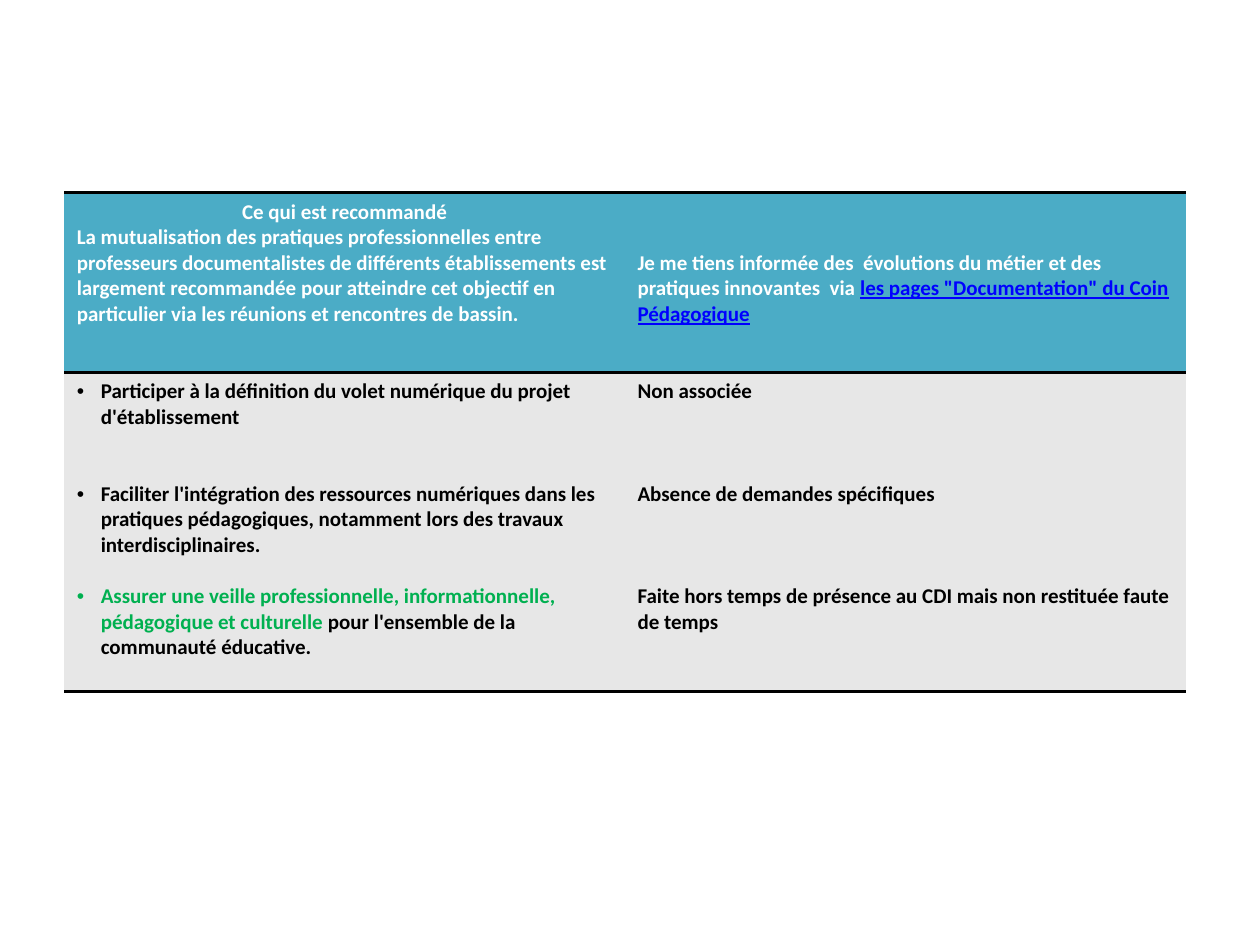
from dataclasses import dataclass

from lxml.etree import SubElement
from pptx import Presentation
from pptx.dml.color import RGBColor as Rgb
from pptx.enum.text import MSO_ANCHOR as Anchor, PP_ALIGN as Align
from pptx.oxml.ns import qn
from pptx.util import Emu, Inches, Pt


@dataclass(frozen=True)
class Theme:
    font: str = "Calibri"
    size: float = 12
    line: float = 14.65  # height of one text line, in points
    rule: float = 2
    indent: float = 0.19
    margin_x: float = 0.1
    margin_y: float = 0.05
    white: str = "FFFFFF"
    black: str = "000000"
    link: str = "0000FF"
    green: str = "00B050"
    header: str = "4BACC6"
    body: str = "E7E7E7"


@dataclass(frozen=True)
class Item:
    """One paragraph: (text, colour) spans and the lines left free above it."""
    spans: tuple
    gap: int = 0
    bullet: bool = False
    align: Align = Align.LEFT


THEME = Theme()
PAGE_WIDTH, PAGE_HEIGHT = Inches(10), Inches(7.5)

HEADER = (
    (
        Item((("Ce qui est recommandé", THEME.white),), align=Align.CENTER),
        Item((("La mutualisation des pratiques professionnelles entre professeurs "
               "documentalistes de différents établissements est largement "
               "recommandée pour atteindre cet objectif en particulier via les "
               "réunions et rencontres de bassin.", THEME.white),)),
    ),
    (
        Item((("Je me tiens informée des  évolutions du métier et des pratiques "
               "innovantes  via ", THEME.white),
              ('les pages "Documentation" du Coin Pédagogique', THEME.link)), gap=2),
    ),
)
BODY = (
    (
        Item((("Participer à la définition du volet numérique du projet "
               "d'établissement", THEME.black),), bullet=True),
        Item((("Faciliter l'intégration des ressources numériques dans les "
               "pratiques pédagogiques, notamment lors des travaux "
               "interdisciplinaires.", THEME.black),), gap=2, bullet=True),
        Item((("Assurer une veille professionnelle, informationnelle, "
               "pédagogique et culturelle ", THEME.green),
              ("pour l'ensemble de la communauté éducative.", THEME.black)),
             gap=1, bullet=True),
    ),
    (
        Item((("Non associée", THEME.black),)),
        Item((("Absence de demandes spécifiques", THEME.black),), gap=3),
        Item((("Faite hors temps de présence au CDI mais non restituée faute "
               "de temps", THEME.black),), gap=3),
    ),
)


def add_bullet(para):
    properties = para._p.get_or_add_pPr()
    properties.set("marL", str(Inches(THEME.indent)))
    properties.set("indent", str(-Inches(THEME.indent)))
    SubElement(properties, qn("a:buFont"), typeface="Arial")
    SubElement(properties, qn("a:buChar"), char="•")


def add_borders(cell):
    """Rules above and below the cell, none at its sides."""
    properties = cell._tc.get_or_add_tcPr()
    for side in ("lnL", "lnR"):
        SubElement(SubElement(properties, qn(f"a:{side}"), w="0"), qn("a:noFill"))
    for side in ("lnT", "lnB"):
        line = SubElement(properties, qn(f"a:{side}"), w=str(Pt(THEME.rule)))
        fill = SubElement(line, qn("a:solidFill"))
        SubElement(fill, qn("a:srgbClr"), val=THEME.black)


def fill_cell(cell, items, colour):
    # Borders come before the fill in the cell properties
    add_borders(cell)
    cell.fill.solid()
    cell.fill.fore_color.rgb = Rgb.from_string(colour)

    # Free lines above the first paragraph belong to the cell margin
    cell.vertical_anchor = Anchor.TOP
    cell.margin_left = cell.margin_right = Inches(THEME.margin_x)
    cell.margin_bottom = Inches(THEME.margin_y)
    cell.margin_top = Inches(THEME.margin_y) + Pt(items[0].gap * THEME.line)

    frame = cell.text_frame
    for index, item in enumerate(items):
        para = frame.add_paragraph() if index else frame.paragraphs[0]
        para.alignment = item.align
        if index:
            para.space_before = Pt(item.gap * THEME.line)
        if item.bullet:
            add_bullet(para)
        for text, ink in item.spans:
            span = para.add_run()
            span.text = text
            span.font.name = THEME.font
            span.font.size = Pt(THEME.size)
            span.font.bold = True
            span.font.underline = ink == THEME.link
            span.font.color.rgb = Rgb.from_string(ink)


def add_practice_table(page, box):
    """Recommended practice on the left, own practice on the right."""
    left, top, width, height = box
    table = page.shapes.add_table(2, 2, left, top, width, height).table
    for column in table.columns:
        column.width = Emu(width // 2)
    for row, share in zip(table.rows, (0.36, 0.64)):
        row.height = Emu(int(height * share))
    for row, cells, colour in zip(table.rows, (HEADER, BODY),
                                  (THEME.header, THEME.body)):
        for cell, items in zip(row.cells, cells):
            fill_cell(cell, items, colour)


def main():
    deck = Presentation()
    deck.slide_width, deck.slide_height = PAGE_WIDTH, PAGE_HEIGHT
    page = deck.slides.add_slide(deck.slide_layouts[6])
    box = (int(PAGE_WIDTH * 0.051), int(PAGE_HEIGHT * 0.204),
           int(PAGE_WIDTH * 0.89), int(PAGE_HEIGHT * 0.528))
    add_practice_table(page, box)
    deck.save("out.pptx")


if __name__ == "__main__":
    main()
